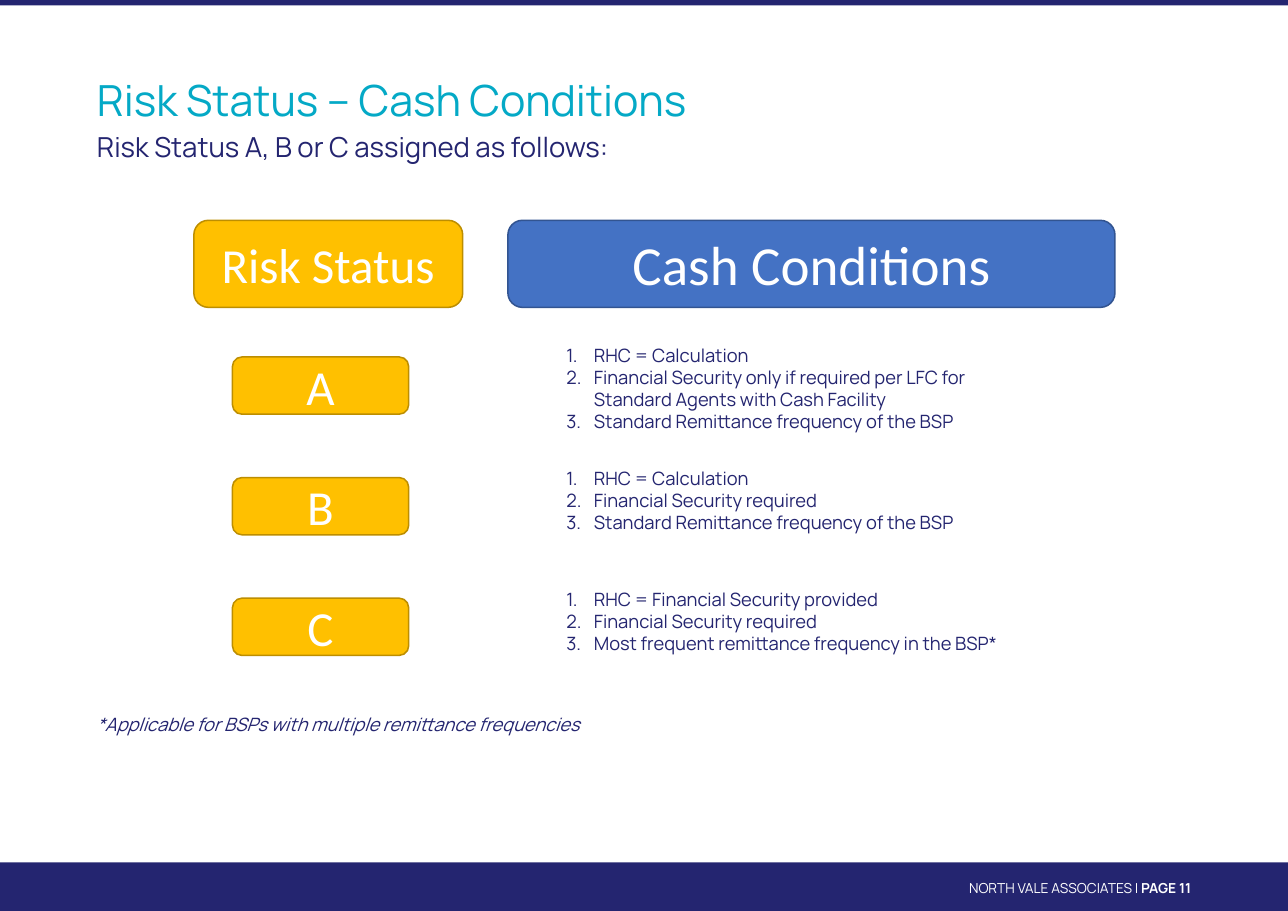
"""Build the slide on cash conditions by risk status."""
from lxml.etree import SubElement
from pptx import Presentation
from pptx.dml.color import RGBColor
from pptx.enum.shapes import MSO_SHAPE
from pptx.enum.text import MSO_ANCHOR, PP_ALIGN
from pptx.oxml.ns import qn
from pptx.util import Inches, Pt

NAVY = RGBColor(0x24, 0x25, 0x70)
TEAL = RGBColor(0x04, 0xA9, 0xC6)
WHITE = RGBColor(0xFF, 0xFF, 0xFF)
AMBER = RGBColor(0xFF, 0xC0, 0x00)
DARK_AMBER = RGBColor(0xBD, 0x8E, 0x00)
BLUE = RGBColor(0x44, 0x72, 0xC4)
DARK_BLUE = RGBColor(0x32, 0x54, 0x91)

presentation = Presentation()
presentation.slide_width = Inches(11.69)
presentation.slide_height = Inches(8.27)
slide = presentation.slides.add_slide(presentation.slide_layouts[6])


def add_box(kind, left, top, width, height, fill, line=None, text="", size=32):
    shape = slide.shapes.add_shape(kind, Inches(left), Inches(top), Inches(width), Inches(height))
    shape.shadow.inherit = False
    shape.fill.solid()
    shape.fill.fore_color.rgb = fill
    if line is None:
        shape.line.fill.background()
    else:
        shape.line.color.rgb = line
        shape.line.width = Pt(1)
    if text:
        shape.text_frame.vertical_anchor = MSO_ANCHOR.MIDDLE
        paragraph = shape.text_frame.paragraphs[0]
        paragraph.alignment = PP_ALIGN.CENTER
        run = paragraph.add_run()
        run.text = text
        run.font.name = "Calibri"
        run.font.size = Pt(size)
        run.font.color.rgb = WHITE


def add_text(left, top, width, height, lines, size, color, numbered=False):
    text_box = slide.shapes.add_textbox(Inches(left), Inches(top), Inches(width), Inches(height))
    frame = text_box.text_frame
    frame.word_wrap = True
    frame.margin_left = frame.margin_right = frame.margin_top = frame.margin_bottom = 0
    for index, line in enumerate(lines):
        paragraph = frame.add_paragraph() if index else frame.paragraphs[0]
        if numbered:
            properties = paragraph._p.get_or_add_pPr()
            properties.set("marL", str(Inches(0.25)))
            properties.set("indent", str(-Inches(0.25)))
            SubElement(properties, qn("a:buFont"), typeface="+mj-lt")
            SubElement(properties, qn("a:buAutoNum"), type="arabicPeriod")
        paragraph.font.name = "Manrope"
        paragraph.font.size = Pt(size)
        for text in line:
            run = paragraph.add_run()
            run.text = text
            run.font.name = "Manrope"
            run.font.size = Pt(size)
            run.font.color.rgb = color
    return frame.paragraphs[0]


add_box(MSO_SHAPE.RECTANGLE, 0, 7.83, 11.69, 0.44, NAVY)
add_box(MSO_SHAPE.RECTANGLE, 0, 0, 11.69, 0.05, NAVY)
footer = add_text(6.93, 7.96, 3.88, 0.18, [["NORTH VALE ASSOCIATES | ", "PAGE 11"]], 9, WHITE)
footer.alignment = PP_ALIGN.RIGHT
footer.line_spacing = Pt(13)
footer.runs[1].font.bold = True

add_text(0.88, 0.67, 9.92, 0.47, [["Risk Status – Cash Conditions"]], 28, TEAL)
add_text(0.88, 1.18, 9.47, 0.47, [["Risk Status A, B or C assigned as follows:"]], 18, NAVY)

add_box(MSO_SHAPE.ROUNDED_RECTANGLE, 1.76, 2, 2.44, 0.79, AMBER, DARK_AMBER, "Risk Status")
add_box(MSO_SHAPE.ROUNDED_RECTANGLE, 4.61, 2, 5.51, 0.79, BLUE, DARK_BLUE, "Cash Conditions", 36)

statuses = [
    ("A", 3.12, 1.01, [
        "RHC = Calculation",
        "Financial Security only if required per LFC for Standard Agents with Cash Facility",
        "Standard Remittance frequency of the BSP",
    ]),
    ("B", 4.24, 0.69, [
        "RHC = Calculation",
        "Financial Security required",
        "Standard Remittance frequency of the BSP",
    ]),
    ("C", 5.34, 0.69, [
        "RHC = Financial Security provided",
        "Financial Security required",
        "Most frequent remittance frequency in the BSP*",
    ]),
]
for row, (status, top, height, conditions) in enumerate(statuses):
    add_box(MSO_SHAPE.ROUNDED_RECTANGLE, 2.11, 3.24 + row * 1.095, 1.6, 0.52,
            AMBER, DARK_AMBER, status)
    add_text(5.14, top, 4.28, height, [[condition] for condition in conditions],
             12, NAVY, numbered=True)

footnote = add_text(0.88, 6.47, 9.47, 0.47,
                    [["*Applicable for BSPs with multiple remittance frequencies"]], 12, NAVY)
footnote.runs[0].font.italic = True

presentation.save("out.pptx")
